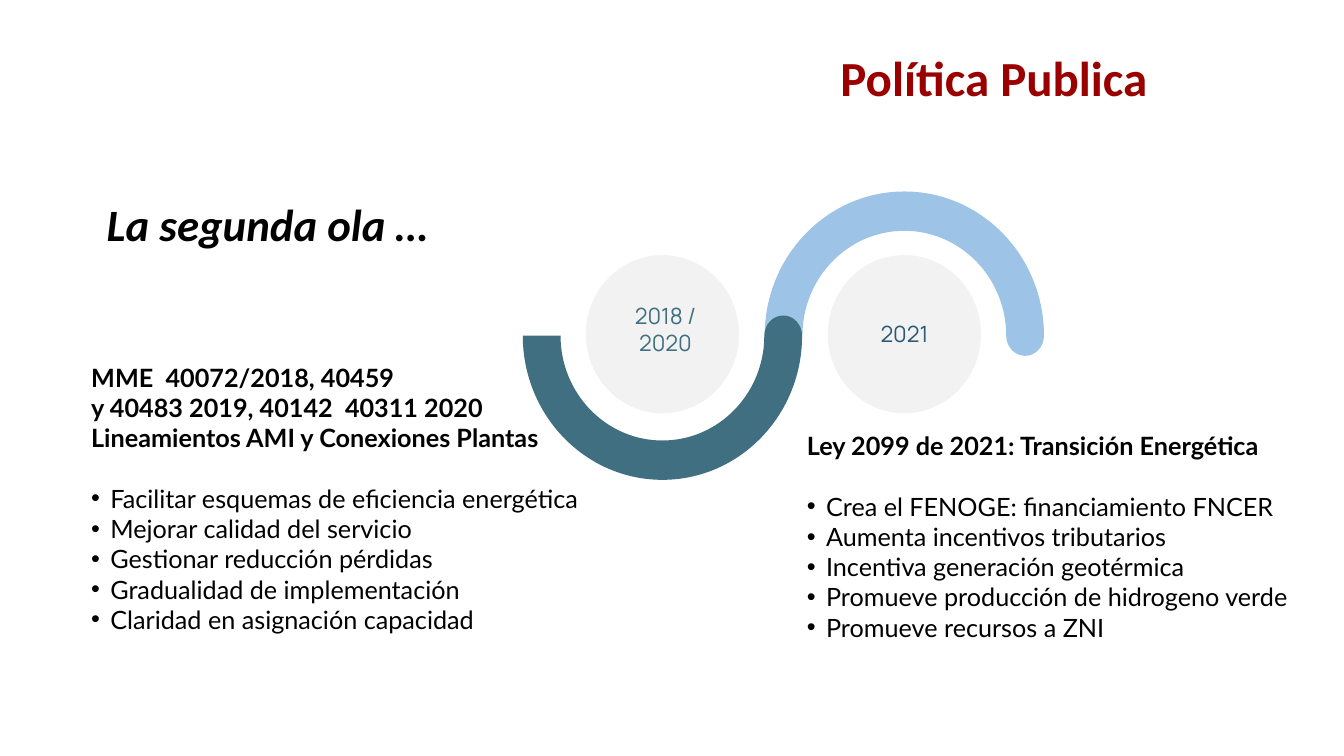
from dataclasses import dataclass
from math import cos, pi, sin, tan

from lxml.etree import SubElement
from pptx import Presentation
from pptx.dml.color import RGBColor
from pptx.enum.shapes import MSO_SHAPE as Preset
from pptx.enum.text import MSO_ANCHOR as Anchor, PP_ALIGN as Align
from pptx.oxml.ns import qn
from pptx.util import Inches, Pt


@dataclass(frozen=True)
class Theme:
    title: str = "9A0000"
    ink: str = "000000"
    disc: str = "F2F2F2"
    heading_font: str = "Calibri"
    body_font: str = "Lato"
    year_font: str = "Manrope"
    title_size: float = 35
    subtitle_size: float = 32
    body_size: float = 18
    year_size: float = 16
    bullet_gap: float = 21.6


THEME = Theme()

TITLE = ("Política Publica", (54.54, 4.67, 38.86, 11.87))
SUBTITLE = ("La segunda ola …", (7.2, 25.33, 26.93, 8.13))
WAVES = [
    {
        "center": 67.29,
        "side": -1,
        "band": "9DC3E6",
        "year": "2021",
        "year_box": (62.72, 41.73, 9.15, 4.93),
        "ink": "295B75",
    },
    {
        "center": 49.29,
        "side": 1,
        "band": "3F6F80",
        "year": "2018 / 2020",
        "year_box": (44.94, 39.33, 9.15, 8.53),
        "ink": "3F6F80",
    },
]
COLUMNS = [
    {
        "box": (6.05, 47.25, 43.21, 37.73),
        "headings": [
            "MME  40072/2018, 40459",
            "y 40483 2019, 40142  40311 2020",
            "Lineamientos AMI y Conexiones Plantas",
        ],
        "bullets": [
            "Facilitar esquemas de eficiencia energética",
            "Mejorar calidad del servicio",
            "Gestionar reducción pérdidas",
            "Gradualidad de implementación",
            "Claridad en asignación capacidad",
        ],
    },
    {
        "box": (59.3, 56.3, 37.96, 29.6),
        "headings": ["Ley 2099 de 2021: Transición Energética"],
        "bullets": [
            "Crea el FENOGE: financiamiento FNCER",
            "Aumenta incentivos tributarios",
            "Incentiva generación geotérmica",
            "Promueve producción de hidrogeno verde",
            "Promueve recursos a ZNI",
        ],
    },
]

WAVE_AXIS = 44.4
OUTER, INNER, CAP = (10.39, 19.07), (7.58, 13.87), (1.4, 2.67)
DISC_WIDTH, DISC_HEIGHT, DISC_AXIS = 11.4, 20.93, 44.2

presentation = Presentation()
presentation.slide_width, presentation.slide_height = Inches(13.33), Inches(7.5)
slide = presentation.slides.add_slide(presentation.slide_layouts[6])


def place(x, y):
    return (
        round(presentation.slide_width * x / 100),
        round(presentation.slide_height * y / 100),
    )


def style(paragraph, font, size, color, bold=False, italic=False):
    paragraph.font.name = font
    paragraph.font.size = Pt(size)
    paragraph.font.color.rgb = RGBColor.from_string(color)
    paragraph.font.bold = bold
    paragraph.font.italic = italic


def paint(shape, color):
    shape.shadow.inherit = False
    shape.fill.solid()
    shape.fill.fore_color.rgb = RGBColor.from_string(color)
    shape.line.fill.background()


def add_text(box):
    left, top, width, height = box
    frame = slide.shapes.add_textbox(*place(left, top), *place(width, height)).text_frame
    frame.word_wrap = True
    return frame


def half_turn(center, radii, start, end):
    quarter = (end - start) / 2
    handle = 4 / 3 * tan(quarter / 4)
    points = []
    for a in (start, start + quarter):
        b = a + quarter
        offsets = [
            (cos(a) - handle * sin(a), sin(a) + handle * cos(a)),
            (cos(b) + handle * sin(b), sin(b) - handle * cos(b)),
            (cos(b), sin(b)),
        ]
        points += [
            place(center + radii[0] * x, WAVE_AXIS + radii[1] * y) for x, y in offsets
        ]
    return points


def curve_segments(shape):
    path = next(shape._element.iter(qn("a:path")))
    lines = path.findall(qn("a:lnTo"))
    for first, second, third in zip(lines[::3], lines[1::3], lines[2::3]):
        first.tag = qn("a:cubicBezTo")
        for line in (second, third):
            first.append(line[0])
            path.remove(line)


def add_wave(center, side, color):
    start = place(center - OUTER[0], WAVE_AXIS)
    inner_start = place(center + INNER[0], WAVE_AXIS)
    cap = half_turn(center + (OUTER[0] + INNER[0]) / 2, CAP, 0, -side * pi)
    points = (
        half_turn(center, OUTER, side * pi, 0)
        + cap[:-1]
        + [inner_start]
        + half_turn(center, INNER, 0, side * pi)
    )
    builder = slide.shapes.build_freeform(*start)
    builder.add_line_segments(points, close=True)
    shape = builder.convert_to_shape()
    curve_segments(shape)
    paint(shape, color)


def add_disc(center):
    corner = place(center - DISC_WIDTH / 2, DISC_AXIS - DISC_HEIGHT / 2)
    disc = slide.shapes.add_shape(Preset.OVAL, *corner, *place(DISC_WIDTH, DISC_HEIGHT))
    paint(disc, THEME.disc)


def add_year(year, box, color):
    paragraph = add_text(box).paragraphs[0]
    paragraph.text = year
    paragraph.alignment = Align.CENTER
    style(paragraph, THEME.year_font, THEME.year_size, color)


def add_bullet(paragraph):
    properties = paragraph._p.get_or_add_pPr()
    properties.set("marL", str(Inches(0.19)))
    properties.set("indent", str(-Inches(0.19)))
    SubElement(properties, qn("a:buFont"), typeface="Arial")
    SubElement(properties, qn("a:buChar"), char="•")


def add_column(box, headings, bullets):
    frame = add_text(box)
    for index, line in enumerate(headings + bullets):
        paragraph = frame.add_paragraph() if index else frame.paragraphs[0]
        paragraph.text = line
        is_heading = index < len(headings)
        if not is_heading:
            add_bullet(paragraph)
        if index == len(headings):
            paragraph.space_before = Pt(THEME.bullet_gap)
        style(paragraph, THEME.body_font, THEME.body_size, THEME.ink, bold=is_heading)


for wave in WAVES:
    add_wave(wave["center"], wave["side"], wave["band"])
for wave in reversed(WAVES):
    add_disc(wave["center"])
for wave in WAVES:
    add_year(wave["year"], wave["year_box"], wave["ink"])
for column in COLUMNS:
    add_column(**column)

subtitle = add_text(SUBTITLE[1]).paragraphs[0]
subtitle.text = SUBTITLE[0]
style(subtitle, THEME.heading_font, THEME.subtitle_size, THEME.ink, bold=True, italic=True)

title_frame = add_text(TITLE[1])
title_frame.vertical_anchor = Anchor.MIDDLE
title = title_frame.paragraphs[0]
title.text = TITLE[0]
title.alignment = Align.CENTER
title.line_spacing = 0.9
style(title, THEME.heading_font, THEME.title_size, THEME.title, bold=True)

presentation.save("out.pptx")
